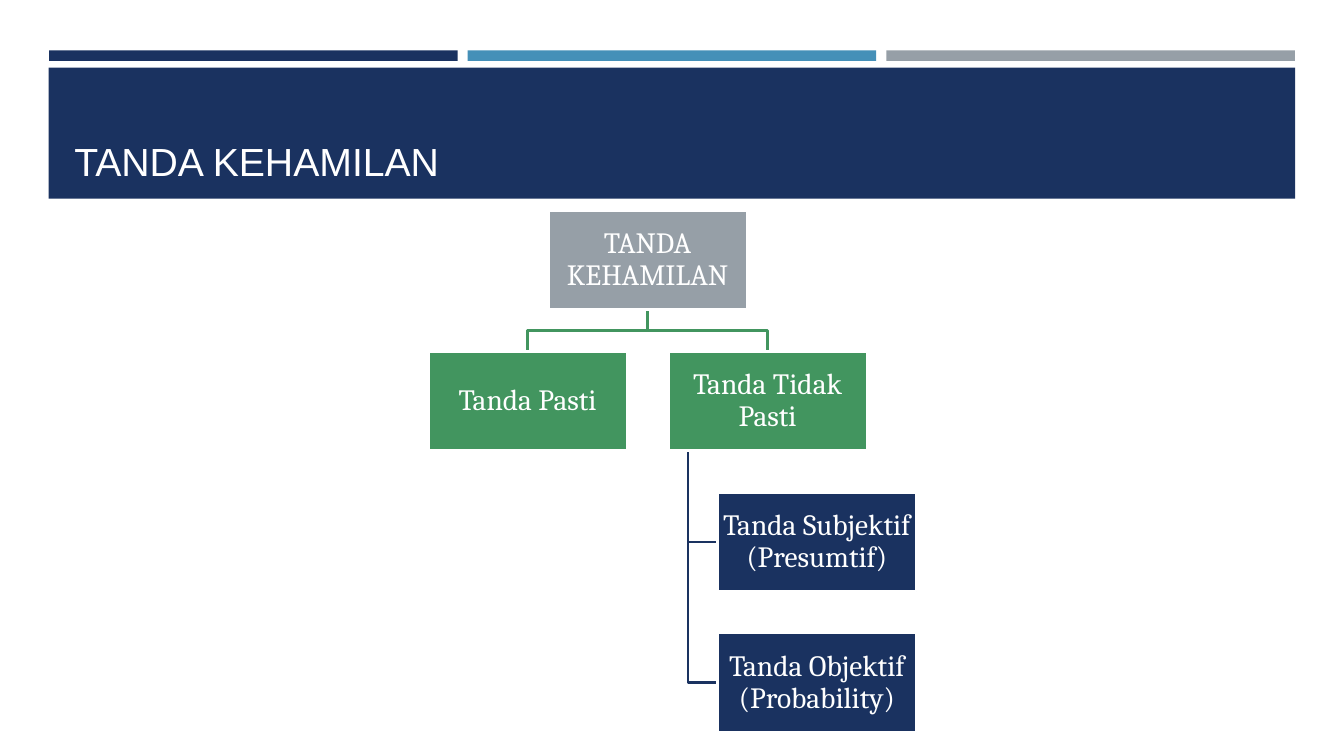
"""Build the slide with the tree of pregnancy signs."""
from dataclasses import dataclass

from pptx import Presentation
from pptx.dml.color import RGBColor as Color
from pptx.enum.shapes import MSO_SHAPE as ShapeKind
from pptx.enum.text import MSO_ANCHOR as Anchor, PP_ALIGN as Align
from pptx.shapes.autoshape import Shape
from pptx.shapes.shapetree import SlideShapes
from pptx.text.text import TextFrame
from pptx.util import Pt


@dataclass(frozen=True)
class Theme:
    navy: Color = Color(0x1A, 0x32, 0x60)
    blue: Color = Color(0x45, 0x90, 0xB8)
    grey: Color = Color(0x96, 0x9F, 0xA7)
    green: Color = Color(0x42, 0x95, 0x5F)
    white: Color = Color(0xFF, 0xFF, 0xFF)
    title_font: str = "Arial"
    node_font: str = "Cambria"
    title_size: float = 28
    node_size: float = 21
    line_width: float = 1.75


THEME = Theme()
NODE_WIDTH, NODE_HEIGHT = 141.8, 70.6
FIRST_ROW_TOP, ROW_STEP = 150.5, 100.6
TRUNK_INSET = 14.2
BAR_LEFT, BAR_WIDTH, BAR_STEP = 35.1, 291.8, 299


@dataclass(frozen=True)
class Node:
    text: str
    left: float
    row: int
    fill: Color

    @property
    def top(self) -> float:
        return FIRST_ROW_TOP + self.row * ROW_STEP

    @property
    def bottom(self) -> float:
        return self.top + NODE_HEIGHT

    @property
    def center(self) -> float:
        return self.left + NODE_WIDTH / 2

    @property
    def middle(self) -> float:
        return self.top + NODE_HEIGHT / 2


ROOT = Node("TANDA KEHAMILAN", 391.7, 0, THEME.grey)
CERTAIN = Node("Tanda Pasti", 306, 1, THEME.green)
UNCERTAIN = Node("Tanda Tidak Pasti", 477.4, 1, THEME.green)
SUBJECTIVE = Node("Tanda Subjektif (Presumtif)", 512.6, 2, THEME.navy)
OBJECTIVE = Node("Tanda Objektif (Probability)", 512.6, 3, THEME.navy)


def add_rectangle(shapes: SlideShapes, left: float, top: float,
                  width: float, height: float, fill: Color) -> Shape:
    """Add a plain filled rectangle without an outline."""
    shape = shapes.add_shape(ShapeKind.RECTANGLE, Pt(left), Pt(top), Pt(width), Pt(height))
    shape.shadow.inherit = False
    shape.fill.solid()
    shape.fill.fore_color.rgb = fill
    shape.line.fill.background()
    return shape


def set_text(text_frame: TextFrame, text: str, font_name: str, size: float) -> None:
    """Write white text in the given font."""
    text_frame.text = text
    text_frame.word_wrap = True
    font = text_frame.paragraphs[0].runs[0].font
    font.name, font.size = font_name, Pt(size)
    font.color.rgb = THEME.white


def add_header(shapes: SlideShapes) -> None:
    """Add the three accent bars and the title band."""
    for index, color in enumerate((THEME.navy, THEME.blue, THEME.grey)):
        add_rectangle(shapes, BAR_LEFT + index * BAR_STEP, 36, BAR_WIDTH, 7.5, color)
    add_rectangle(shapes, 34.8, 48.4, 890.4, 93.6, THEME.navy)
    title = shapes.add_textbox(Pt(46), Pt(55.4), Pt(868.3), Pt(80))
    set_text(title.text_frame, "TANDA KEHAMILAN", THEME.title_font, THEME.title_size)
    title.text_frame.vertical_anchor = Anchor.BOTTOM


def add_branch(shapes: SlideShapes, points: list[tuple[float, float]], color: Color) -> None:
    """Draw an open angled line through the points."""
    start, *rest = [(Pt(x), Pt(y)) for x, y in points]
    builder = shapes.build_freeform(*start)
    builder.add_line_segments(rest, close=False)
    branch = builder.convert_to_shape()
    branch.shadow.inherit = False
    branch.fill.background()
    branch.line.color.rgb = color
    branch.line.width = Pt(THEME.line_width)


def add_fork(shapes: SlideShapes, parent: Node, child: Node) -> None:
    """Join a parent to a child on the row below."""
    halfway = (parent.bottom + child.top) / 2
    add_branch(shapes, [(parent.center, parent.bottom), (parent.center, halfway),
                        (child.center, halfway), (child.center, child.top)], child.fill)


def add_hanger(shapes: SlideShapes, parent: Node, child: Node) -> None:
    """Join a parent to the left side of a child hanging below it."""
    trunk = parent.left + TRUNK_INSET
    add_branch(shapes, [(trunk, parent.bottom), (trunk, child.middle),
                        (child.left, child.middle)], child.fill)


def add_node(shapes: SlideShapes, node: Node) -> None:
    """Add a labelled box of the tree."""
    shape = add_rectangle(shapes, node.left, node.top, NODE_WIDTH, NODE_HEIGHT, node.fill)
    shape.line.color.rgb = THEME.white
    shape.line.width = Pt(THEME.line_width)
    text_frame = shape.text_frame
    set_text(text_frame, node.text, THEME.node_font, THEME.node_size)
    text_frame.vertical_anchor = Anchor.MIDDLE
    text_frame.margin_left = text_frame.margin_right = Pt(1)
    text_frame.margin_top = text_frame.margin_bottom = Pt(1)
    paragraph = text_frame.paragraphs[0]
    paragraph.alignment = Align.CENTER
    paragraph.line_spacing = 0.9


def main() -> None:
    """Build and save the presentation."""
    presentation = Presentation()
    presentation.slide_width, presentation.slide_height = Pt(960), Pt(540)
    slide = presentation.slides.add_slide(presentation.slide_layouts[6])
    add_header(slide.shapes)
    for child in (OBJECTIVE, SUBJECTIVE):
        add_hanger(slide.shapes, UNCERTAIN, child)
    for child in (UNCERTAIN, CERTAIN):
        add_fork(slide.shapes, ROOT, child)
    for node in (ROOT, CERTAIN, UNCERTAIN, SUBJECTIVE, OBJECTIVE):
        add_node(slide.shapes, node)
    presentation.save("out.pptx")


if __name__ == "__main__":
    main()
